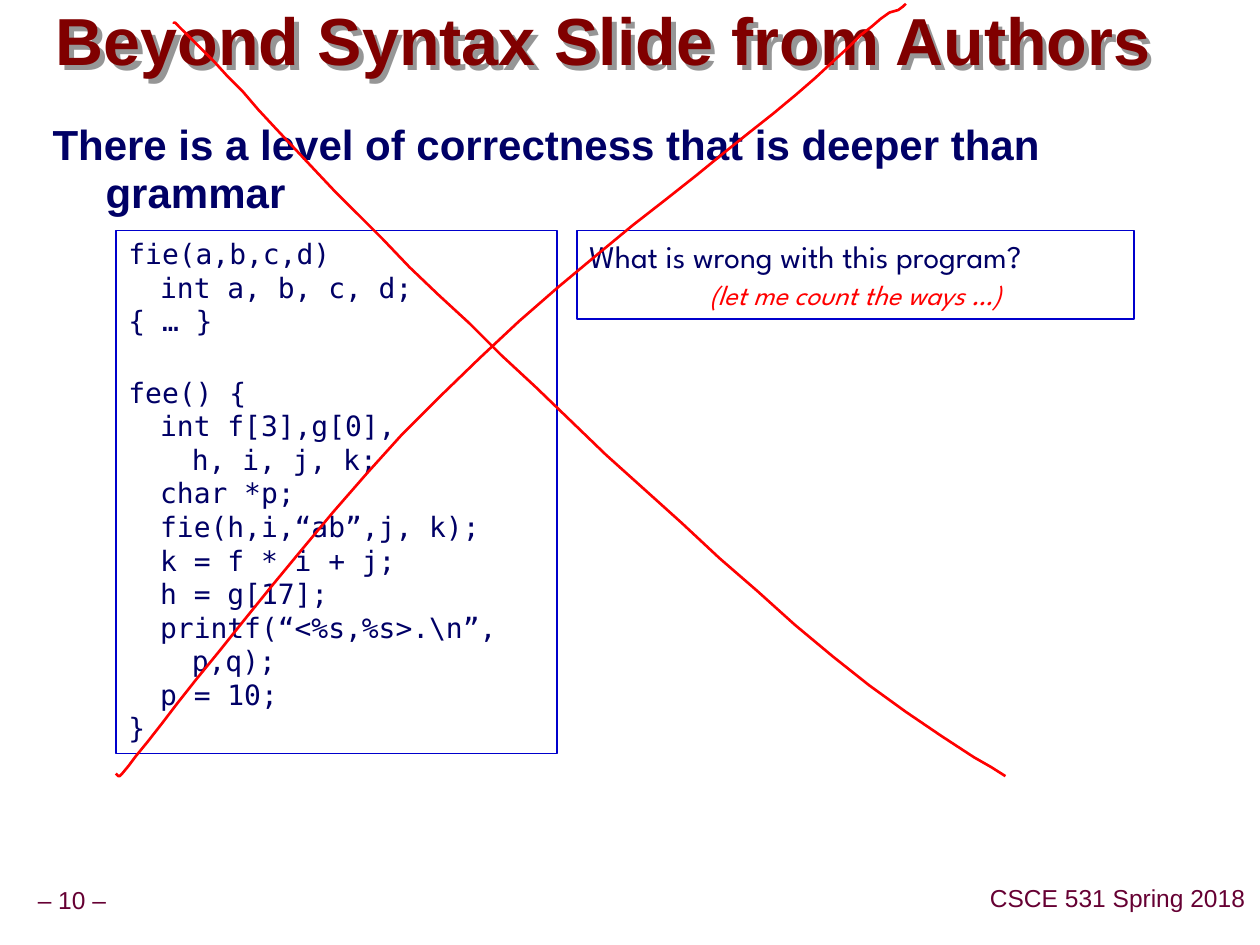
from lxml import etree
from pptx import Presentation
from pptx.dml.color import RGBColor
from pptx.enum.shapes import MSO_SHAPE
from pptx.enum.text import MSO_ANCHOR, PP_ALIGN
from pptx.oxml.ns import qn
from pptx.util import Cm, Pt

RECTANGLE = MSO_SHAPE.RECTANGLE
TOP, MIDDLE = MSO_ANCHOR.TOP, MSO_ANCHOR.MIDDLE
LEFT, CENTER = PP_ALIGN.LEFT, PP_ALIGN.CENTER

SANS, MONO, ROUND = "Arial", "DejaVu Sans Mono", "League Spartan"
NAVY, BLUE, RED, MAROON, PLUM, GRAY = "000066", "0000CC", "FF0000", "800000", "660033", "969696"
STROKE_UNIT = Cm(2.54) / 100
TAB = Cm(0.64)

CODE = [
    "fie(a,b,c,d)", "\tint a, b, c, d;", "{ … }",
    "fee() {", "\tint f[3],g[0],", "\t\th, i, j, k;", "\tchar *p;",
    "\tfie(h,i,“ab”,j, k);", "\tk = f * i + j;", "\th = g[17];",
    "\tprintf(“<%s,%s>.\\n”,", "\t\tp,q);", "\tp = 10;", "}",
]

RISING_STROKE = [
    (719, 3), (717, 5), (713, 8), (706, 10), (699, 15), (692, 21), (683, 28),
    (673, 38), (661, 49), (647, 62), (632, 75), (614, 90), (595, 105), (575, 121),
    (553, 139), (529, 158), (502, 179), (473, 203), (443, 228), (412, 255),
    (381, 284), (350, 314), (319, 345), (291, 376), (264, 407), (239, 437),
    (215, 466), (194, 492), (174, 517), (156, 539), (141, 558), (128, 575),
    (117, 589), (108, 600), (102, 608), (97, 614), (95, 616), (94, 616), (92, 614),
]

FALLING_STROKE = [
    (138, 19), (138, 18), (139, 18), (145, 24), (153, 32), (161, 40), (171, 50),
    (181, 61), (193, 73), (205, 87), (218, 101), (233, 117), (248, 133), (265, 151),
    (284, 170), (304, 190), (325, 212), (348, 234), (373, 257), (398, 282),
    (425, 307), (453, 334), (481, 361), (511, 388), (541, 415), (571, 443),
    (601, 469), (631, 496), (661, 521), (690, 544), (719, 565), (747, 584),
    (773, 601), (787, 609), (798, 616),
]


def rgb(value):
    """Turn a hex string into a colour."""
    return RGBColor.from_string(value)


class SlideWriter:
    """Hold the text style and the slide being filled."""

    def __init__(self, slide, font=SANS, color=NAVY):
        self.slide = slide
        self.font = font
        self.color = color

    def text_box(self, left, top, width, height, anchor=TOP, inset=(0.25, 0.13), wrap=True):
        """Add an empty text box."""
        box = self.slide.shapes.add_textbox(Cm(left), Cm(top), Cm(width), Cm(height))
        frame = box.text_frame
        frame.word_wrap = wrap
        frame.vertical_anchor = anchor
        frame.margin_left = frame.margin_right = Cm(inset[0])
        frame.margin_top = frame.margin_bottom = Cm(inset[1])
        return box

    def outlined_box(self, left, top, width, height):
        """Add an unfilled rectangle with a thin blue line."""
        box = self.slide.shapes.add_shape(RECTANGLE, Cm(left), Cm(top), Cm(width), Cm(height))
        box.shadow.inherit = False
        box.fill.background()
        box.line.color.rgb = rgb(BLUE)
        box.line.width = Pt(0.75)
        box.text_frame.word_wrap = True
        box.text_frame.vertical_anchor = TOP
        return box

    def paragraph(self, box, text, size, font=None, color=None, bold=False, italic=False,
                  align=LEFT, line=1.0, before=0):
        """Write one run as the next paragraph of a box."""
        frame = box.text_frame
        para = frame.paragraphs[0] if not frame.text else frame.add_paragraph()
        para.alignment = align
        para.line_spacing = line
        para.space_before = Pt(before)
        span = para.add_run()
        span.text = text
        span.font.name = font or self.font
        span.font.size = Pt(size)
        span.font.bold = bold
        span.font.italic = italic
        span.font.color.rgb = rgb(color or self.color)
        return para

    def hanging_indent(self, para, depth):
        """Indent every line of a paragraph but the first."""
        props = para._p.get_or_add_pPr()
        props.set("marL", str(Cm(depth)))
        props.set("indent", str(-Cm(depth)))

    def tab_stops(self, para, count):
        """Give a paragraph evenly spaced tab stops."""
        stops = etree.SubElement(para._p.get_or_add_pPr(), qn("a:tabLst"))
        for number in range(1, count + 1):
            etree.SubElement(stops, qn("a:tab"), pos=str(TAB * number), algn="l")

    def drop_shadow(self, box):
        """Cast a hard gray shadow to the lower right."""
        effects = etree.SubElement(box._element.spPr, qn("a:effectLst"))
        shadow = etree.SubElement(effects, qn("a:outerShdw"), dist=str(Cm(0.13)),
                                  dir="2700000", algn="ctr", rotWithShape="0")
        etree.SubElement(shadow, qn("a:srgbClr"), val=GRAY)

    def stroke(self, points):
        """Draw an open red pen stroke."""
        builder = self.slide.shapes.build_freeform(*points[0], scale=STROKE_UNIT)
        builder.add_line_segments(points[1:], close=False)
        shape = builder.convert_to_shape()
        shape.shadow.inherit = False
        shape.fill.background()
        shape.line.color.rgb = rgb(RED)
        shape.line.width = Pt(1.5)


def main():
    """Build the slide and save the deck."""
    deck = Presentation()
    deck.slide_width, deck.slide_height = Cm(25.4), Cm(19.05)
    page = SlideWriter(deck.slides.add_slide(deck.slide_layouts[6]))

    footers = [("– 10 –", 0.61, 17.78, 1.68), ("CSCE 531 Spring 2018", 19.81, 17.75, 5.44)]
    for text, left, top, width in footers:
        footer = page.text_box(left, top, width, 0.79, MIDDLE, (0.13, 0.13), wrap=False)
        page.paragraph(footer, text, 14, color=PLUM, align=CENTER, line=0.9)

    title = page.text_box(1.12, 0.2, 24.21, 1.42, MIDDLE, (0, 0))
    page.paragraph(title, "Beyond Syntax Slide from Authors", 38, color=MAROON, bold=True, line=0.87)
    page.drop_shadow(title)

    body = page.text_box(0.81, 2.34, 23.09, 15.57)
    statement = page.paragraph(body, "There is a level of correctness that is deeper than grammar",
                               24, bold=True, line=0.95)
    page.hanging_indent(statement, 1.07)

    program = page.outlined_box(2.34, 4.65, 8.89, 10.54)
    for text in CODE:
        gap = 21.5 if text.startswith("fee") else 0
        page.tab_stops(page.paragraph(program, text, 16, font=MONO, before=gap), 2)

    question = page.outlined_box(11.63, 4.65, 11.23, 1.78)
    page.paragraph(question, "What is wrong with this program?", 18, font=ROUND)
    page.paragraph(question, "(let me count the ways …)", 16, font=ROUND, color=RED,
                   italic=True, align=CENTER, before=1.6)

    for points in (RISING_STROKE, FALLING_STROKE):
        page.stroke(points)

    deck.save("out.pptx")


if __name__ == "__main__":
    main()
